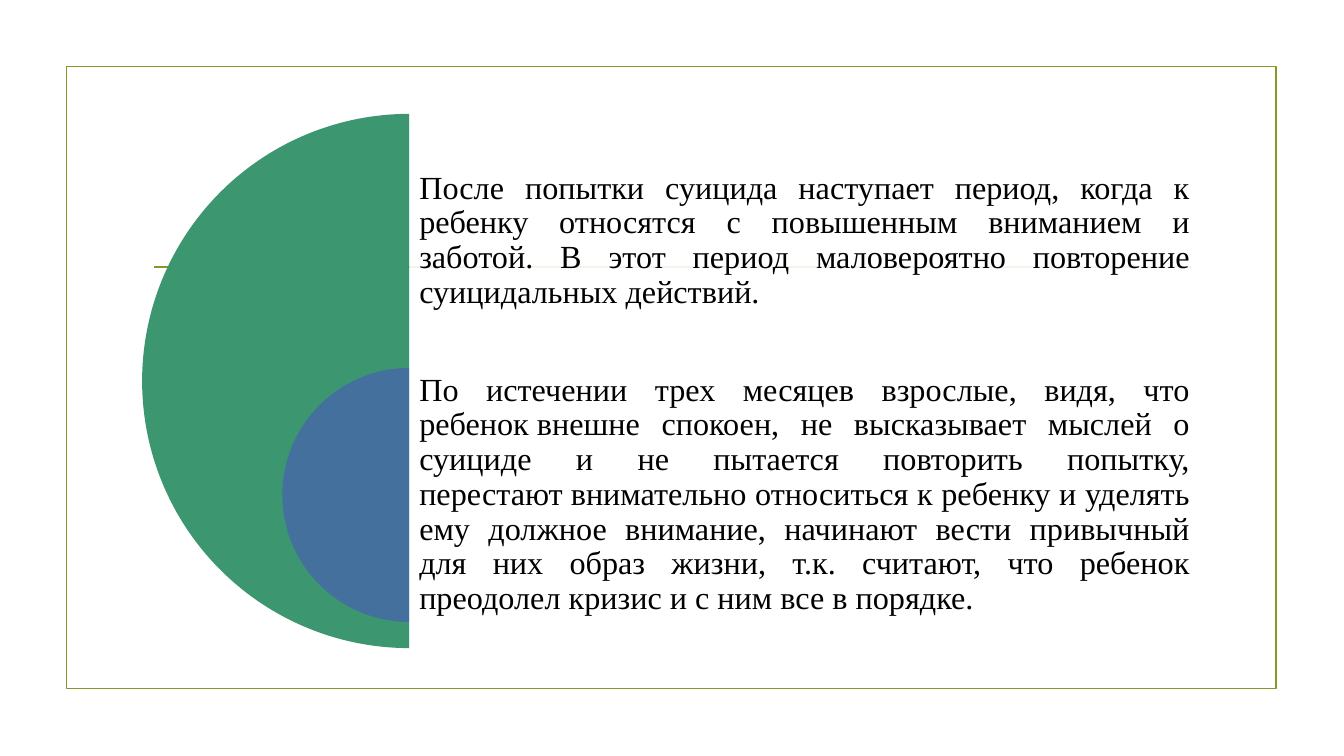
from pptx import Presentation
from pptx.dml.color import RGBColor
from pptx.enum.shapes import MSO_CONNECTOR, MSO_SHAPE
from pptx.enum.text import MSO_ANCHOR, PP_ALIGN
from pptx.oxml.ns import qn
from pptx.util import Inches, Pt
from lxml.etree import SubElement

OLIVE = RGBColor(0x83, 0x99, 0x2A)
GREEN = RGBColor(0x3C, 0x97, 0x70)
BLUE = RGBColor(0x44, 0x70, 0x9D)
WHITE = RGBColor(0xFF, 0xFF, 0xFF)
BLACK = RGBColor(0, 0, 0)

HARD_SPACE = chr(160)
PANEL_LEFT, PANEL_WIDTH = 4.06, 7.85
TEXT_HEIGHT = 2.52

STAGES = [
    (1.13, 5.3, GREEN,
     "После попытки суицида наступает период, когда к ребенку относятся с "
     "повышенным вниманием и заботой. В этот период маловероятно повторение "
     "суицидальных действий."),
    (3.65, 2.52, BLUE,
     "По истечении трех месяцев взрослые, видя, что "
     f"ребенок{HARD_SPACE}внешне спокоен, не высказывает мыслей о суициде и "
     f"не пытается повторить попытку, перестают{HARD_SPACE}внимательно "
     "относиться к ребенку и уделять ему должное внимание, начинают вести "
     "привычный для них образ жизни, т.к. считают, что ребенок преодолел "
     "кризис и с ним все в порядке."),
]


class SlideBuilder:
    line_width = Pt(1.25)
    font_format = {"name": "Times New Roman", "size": Pt(23)}
    para_format = {"alignment": PP_ALIGN.JUSTIFY, "line_spacing": 0.9}
    frame_format = {
        "word_wrap": True,
        "vertical_anchor": MSO_ANCHOR.MIDDLE,
        **{f"margin_{side}": Inches(0.1) for side in ("left", "top", "right", "bottom")},
    }

    def __init__(self, page):
        self.page = page

    def apply(self, target, formats):
        for name, value in formats.items():
            setattr(target, name, value)

    def shape(self, kind, left, top, width, height, fill=None, line=None):
        shape = self.page.shapes.add_shape(
            kind, Inches(left), Inches(top), Inches(width), Inches(height))
        shape.shadow.inherit = False
        if fill is None:
            shape.fill.background()
        else:
            shape.fill.solid()
            shape.fill.fore_color.rgb = fill
        if line is None:
            shape.line.fill.background()
        else:
            shape.line.color.rgb = line
            shape.line.width = self.line_width
        return shape

    def rule(self, left, right, top):
        rule = self.page.shapes.add_connector(
            MSO_CONNECTOR.STRAIGHT, Inches(left), Inches(top), Inches(right), Inches(top))
        rule.line.color.rgb = OLIVE
        rule.line.width = self.line_width
        SubElement(rule._element.spPr, qn("a:effectLst"))

    def half_disc(self, center, top, size, fill):
        disc = self.shape(MSO_SHAPE.PIE, center - size / 2, top, size, size, fill)
        disc.adjustments[0] = 54
        disc.adjustments[1] = 162

    def panel(self, top, height):
        panel = self.shape(MSO_SHAPE.RECTANGLE, PANEL_LEFT, top, PANEL_WIDTH, height, WHITE)
        color = panel._element.spPr.find(qn("a:solidFill")).find(qn("a:srgbClr"))
        SubElement(color, qn("a:alpha"), val="90000")

    def text(self, top, wording):
        box = self.page.shapes.add_textbox(
            Inches(PANEL_LEFT), Inches(top), Inches(PANEL_WIDTH), Inches(TEXT_HEIGHT))
        frame = box.text_frame
        self.apply(frame, self.frame_format)
        para = frame.paragraphs[0]
        self.apply(para, self.para_format)
        span = para.add_run()
        span.text = wording
        self.apply(span.font, self.font_format)
        span.font.color.rgb = BLACK


def main():
    deck = Presentation()
    deck.slide_width, deck.slide_height = Inches(13.33), Inches(7.5)
    builder = SlideBuilder(deck.slides.add_slide(deck.slide_layouts[6]))

    builder.shape(MSO_SHAPE.RECTANGLE, 0.66, 0.66, 12, 6.17, line=OLIVE)
    builder.rule(1.53, 11.81, 2.65)
    for top, size, fill, wording in STAGES:
        builder.half_disc(PANEL_LEFT, top, size, fill)
        builder.panel(top, size)
        builder.text(top, wording)

    deck.save("out.pptx")


if __name__ == "__main__":
    main()
